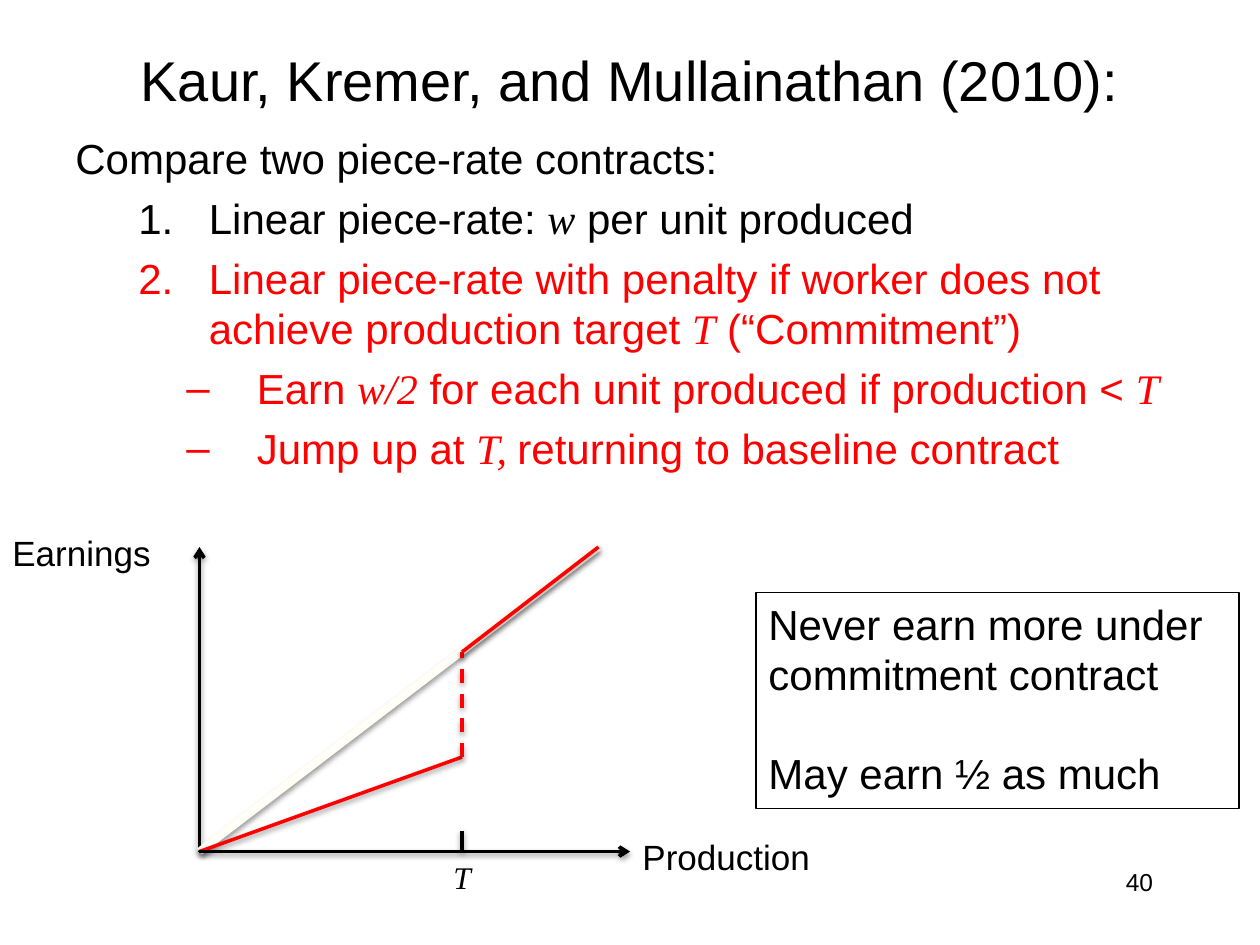
from lxml import etree
from pptx import Presentation
from pptx import util as u
from pptx.dml.color import RGBColor
from pptx.enum import dml, shapes, text
from pptx.oxml import parse_xml
from pptx.oxml.ns import nsdecls, qn

BLACK = RGBColor(0, 0, 0)
RED = RGBColor(255, 0, 0)
CREAM = RGBColor(255, 255, 247)
COLS, ROWS = 120, 90
NUMBER = ("buAutoNum", "type", "arabicPeriod")
DASH = ("buChar", "char", "–")
SHADE = (
    f'<a:effectLst {nsdecls("a")}>'
    '<a:outerShdw blurRad="40000" dist="20000" dir="5400000" rotWithShape="0">'
    '<a:srgbClr val="000000"><a:alpha val="38000"/></a:srgbClr>'
    '</a:outerShdw></a:effectLst>'
)


def write(para, words, size=24, color=BLACK, align=None, before=0,
          left=0, hang=0, bullet=None):
    para.alignment = align
    para.space_before = u.Pt(before)
    props = para._p.get_or_add_pPr()
    props.set("marL", str(u.Inches(left)))
    props.set("indent", str(-u.Inches(hang)))
    if bullet:
        tag, key, value = bullet
        etree.SubElement(props, qn("a:buFont")).set("typeface", "Arial")
        etree.SubElement(props, qn("a:" + tag)).set(key, value)
    for i, part in enumerate(words.split("*")):
        if part:
            run = para.add_run()
            run.text = part
            font = run.font
            font.size = u.Pt(size)
            font.color.rgb = color
            font.italic = i % 2 == 1
            font.name = "Times New Roman" if font.italic else "Arial"


class Deck:
    def __init__(self):
        self.prs = Presentation()
        self.prs.slide_width = u.Inches(10)
        self.prs.slide_height = u.Inches(7.5)
        self.slide = self.prs.slides.add_slide(self.prs.slide_layouts[5])

    def spot(self, col, row):
        return (round(self.prs.slide_width * col / COLS),
                round(self.prs.slide_height * row / ROWS))

    def area(self, col, row, wide, high):
        return *self.spot(col, row), *self.spot(wide, high)

    def fill(self, frame, lines):
        frame.word_wrap = True
        for i, (words, form) in enumerate(lines):
            para = frame.add_paragraph() if i else frame.paragraphs[0]
            write(para, words, **form)

    def title(self, words, *area):
        head = self.slide.shapes.title
        head.left, head.top, head.width, head.height = self.area(*area)
        head.text_frame.vertical_anchor = text.MSO_ANCHOR.MIDDLE
        self.fill(head.text_frame,
                  [(words, dict(size=32, align=text.PP_ALIGN.CENTER))])

    def body(self, lines, *area):
        box = self.slide.shapes.add_textbox(*self.area(*area))
        self.fill(box.text_frame, lines)

    def label(self, words, *area, **form):
        self.body([(words, form)], *area)

    def panel(self, lines, *area):
        box = self.slide.shapes.add_shape(
            shapes.MSO_SHAPE.RECTANGLE, *self.area(*area))
        box.shadow.inherit = False
        box.fill.background()
        box.line.color.rgb = BLACK
        box.line.width = u.Pt(0.75)
        box.text_frame.vertical_anchor = text.MSO_ANCHOR.TOP
        self.fill(box.text_frame, lines)

    def line(self, start, end, color=BLACK, width=2, arrow=False, dash=False):
        link = self.slide.shapes.add_connector(
            shapes.MSO_CONNECTOR.STRAIGHT, *self.spot(*start), *self.spot(*end))
        link.line.color.rgb = color
        link.line.width = u.Pt(width)
        if dash:
            link.line.dash_style = dml.MSO_LINE.DASH
        if arrow:
            stroke = link.line._get_or_add_ln()
            etree.SubElement(stroke, qn("a:tailEnd")).set("type", "arrow")
        link._element.spPr.append(parse_xml(SHADE))


def main():
    deck = Deck()
    deck.title("Kaur, Kremer, and Mullainathan (2010):", 6, 0, 108, 15)

    item = dict(before=5.5, left=1.06, hang=0.56, bullet=NUMBER)
    sub = dict(item, left=1.44, bullet=DASH, color=RED)
    deck.body([
        ("Compare two piece-rate contracts:",
         dict(before=5.5, left=0.38, hang=0.38)),
        ("Linear piece-rate: *w* per unit produced", item),
        ("Linear piece-rate with penalty if worker does not achieve "
         "production target *T* (“Commitment”)", dict(item, color=RED)),
        ("Earn *w/2* for each unit produced if production < *T*", sub),
        ("Jump up at *T, *returning to baseline contract", sub),
    ], 6, 12, 108, 59.4)

    left, goal, right = 19, 44, 57
    base, top = 81.1, 52.1
    zero, peak = (left, base), (right, top)
    high, low = (goal, 62.1), (goal, 72.1)
    deck.line(zero, (left, top), arrow=True)
    deck.line(zero, peak, CREAM, 4.5)
    deck.line(zero, low, RED)
    deck.line(low, high, RED, dash=True)
    deck.line(high, peak, RED)
    deck.line((goal, base), (goal, base - 2))
    deck.label("*T*", goal - 2, base, 5, 4.8, size=18)
    deck.label("Earnings", 0, 50, left, 5.3, size=20)
    deck.label("Production", 60, 79, 26, 5.3, size=20)

    deck.panel([
        ("Never earn more under commitment contract", {}),
        ("May earn ½ as much", dict(before=27.6)),
    ], 72, 56.4, 46, 20.6)
    deck.line(zero, (60, base), arrow=True)
    deck.label("40", 86, 82, 25, 6, size=14, align=text.PP_ALIGN.RIGHT)
    for para in deck.slide.shapes[-2 - 1].text_frame.paragraphs:
        para.alignment = text.PP_ALIGN.LEFT
    deck.prs.save("out.pptx")


if __name__ == "__main__":
    main()
